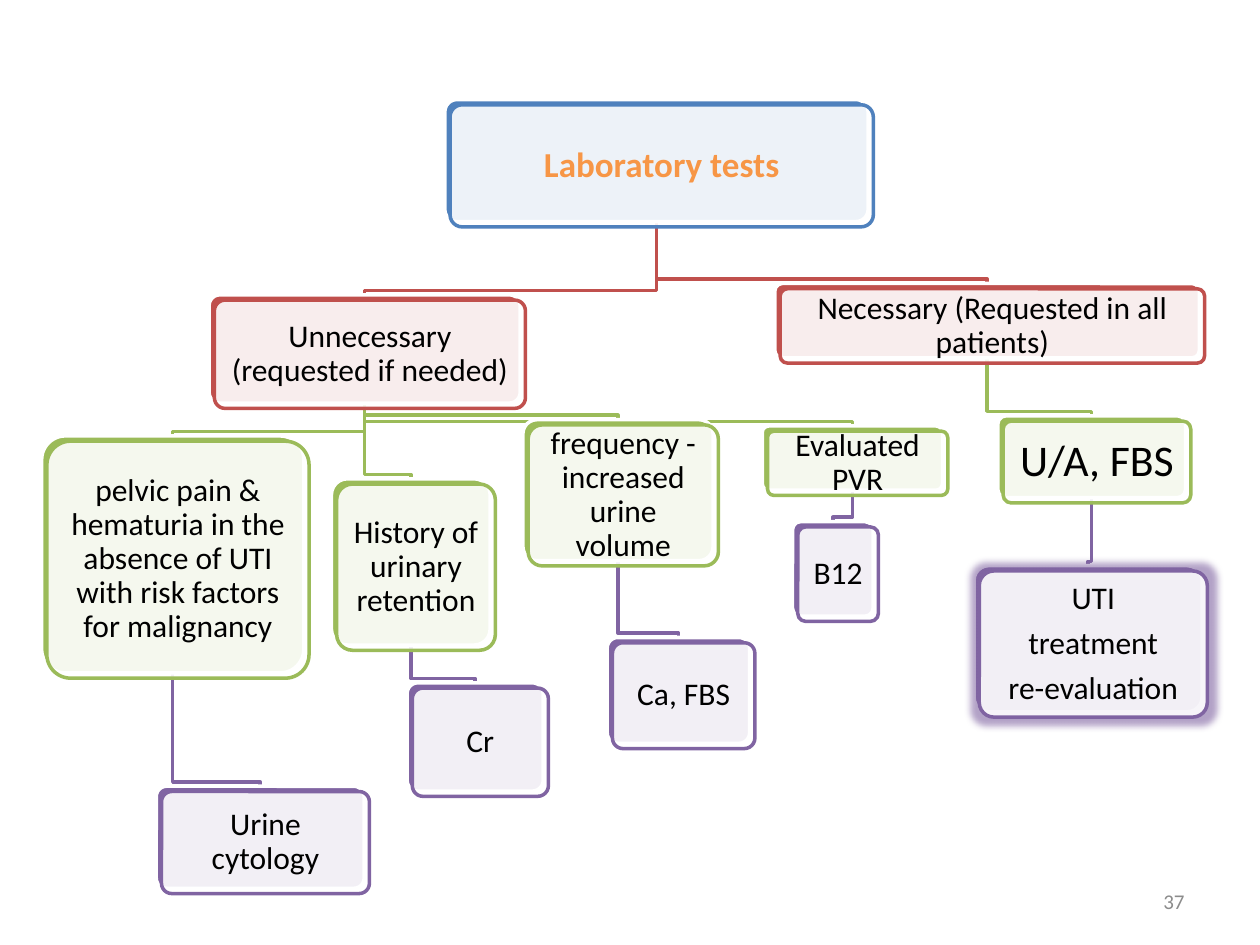
from dataclasses import dataclass

from lxml.etree import SubElement
from pptx import Presentation
from pptx.dml.color import RGBColor
from pptx.enum.shapes import MSO_SHAPE
from pptx.enum.text import MSO_ANCHOR, PP_ALIGN
from pptx.oxml.ns import qn
from pptx.util import Pt

COLORS = {
    "root": "4F81BD",
    "group": "C0504D",
    "finding": "9BBB59",
    "test": "8064A2",
    "heading": "F79646",
    "text": "000000",
    "white": "FFFFFF",
    "number": "8C8C8C",
}
FONT = "Calibri"
LINE_WIDTH = 2
FRONT_OFFSET = 3
KNEE_HEIGHT = 2.5


@dataclass
class Node:
    text: str
    level: str
    left: float
    top: float
    width: float
    height: float
    parent: str = ""
    size: float = 18
    inset: float = 5

    @property
    def center(self):
        return self.left + self.width / 2

    @property
    def bottom(self):
        return self.top + self.height


NODES = {
    "tests": Node("Laboratory tests", "root", 254.2, 56.9, 241.9, 69.8, size=20),
    "unnecessary": Node("Unnecessary (requested if needed)", "group",
                        119.5, 168.5, 177.8, 61.9, "tests"),
    "pain": Node("pelvic pain & hematuria in the absence of UTI with risk factors "
                 "for malignancy", "finding", 23.8, 249.1, 149.8, 135.4, "unnecessary"),
    "cytology": Node("Urine cytology", "test", 89.3, 449.3, 118.8, 58.3, "pain"),
    "retention": Node("History of urinary retention", "finding",
                      189.4, 273.6, 90.7, 95, "unnecessary"),
    "creatinine": Node("Cr", "test", 232.6, 390.2, 77.8, 61.9, "retention"),
    "frequency": Node("frequency - increased urine volume", "finding",
                      298.8, 239.8, 108.7, 80.6, "unnecessary"),
    "calcium": Node("Ca, FBS", "test", 347, 364.3, 81.4, 60.5, "frequency"),
    "residual": Node("Evaluated PVR", "finding", 435.6, 243.4, 103, 36.7, "unnecessary"),
    "vitamin": Node("B12", "test", 452.9, 298.1, 46.1, 54, "residual"),
    "necessary": Node("Necessary (Requested in all patients)", "group",
                      442.8, 162, 242.6, 42.5, "tests"),
    "urinalysis": Node("U/A, FBS", "finding", 570.2, 237.6, 107.3, 46.8, "necessary",
                       size=25, inset=7),
    "infection": Node("UTI\ntreatment\nre-evaluation", "test",
                      556.6, 323.3, 130.3, 83.5, "urinalysis"),
}


def rgb(name):
    return RGBColor.from_string(COLORS[name])


def set_alpha(color_element, percent):
    SubElement(color_element, qn("a:alpha")).set("val", str(percent * 1000))


def set_line(shape, color):
    shape.line.color.rgb = rgb(color)
    shape.line.width = Pt(LINE_WIDTH)


def add_branch(slide, parent, child):
    """Draw the elbow from the parent's bottom centre to the child's top centre."""
    knee = child.top - KNEE_HEIGHT
    builder = slide.shapes.build_freeform(Pt(parent.center), Pt(parent.bottom))
    builder.add_line_segments(
        [(Pt(parent.center), Pt(knee)), (Pt(child.center), Pt(knee)),
         (Pt(child.center), Pt(child.top))], close=False)
    branch = builder.convert_to_shape()
    branch.shadow.inherit = False
    branch.fill.background()
    set_line(branch, child.level)


def add_card(slide, node, offset, fill, line):
    card = slide.shapes.add_shape(
        MSO_SHAPE.ROUNDED_RECTANGLE, Pt(node.left + offset), Pt(node.top + offset),
        Pt(node.width), Pt(node.height))
    card.adjustments[0] = 0.1
    card.shadow.inherit = False
    card.fill.solid()
    card.fill.fore_color.rgb = rgb(fill)
    set_line(card, line)
    return card


def write_label(card, node):
    frame = card.text_frame
    frame.word_wrap = True
    frame.vertical_anchor = MSO_ANCHOR.MIDDLE
    frame.margin_left = frame.margin_right = Pt(node.inset)
    frame.margin_top = frame.margin_bottom = Pt(node.inset)
    frame.text = node.text
    is_root = node.level == "root"
    for paragraph in frame.paragraphs:
        paragraph.alignment = PP_ALIGN.CENTER
        paragraph.line_spacing = 0.9
        paragraph.space_after = Pt(round(node.size * 0.35, 2))
        paragraph.font.name = FONT
        paragraph.font.size = Pt(node.size)
        paragraph.font.bold = is_root
        paragraph.font.color.rgb = rgb("heading" if is_root else "text")


def add_node(slide, node):
    """Stack a translucent white card with the label on a solid coloured one."""
    add_card(slide, node, 0, node.level, "white")
    front = add_card(slide, node, FRONT_OFFSET, "white", node.level)
    set_alpha(front.fill._xPr.find(".//" + qn("a:srgbClr")), 90)
    write_label(front, node)
    return front


def add_glow(card, color, radius):
    effects = card._element.spPr.find(qn("a:effectLst"))
    glow = SubElement(effects, qn("a:glow"))
    glow.set("rad", str(Pt(radius)))
    glow_color = SubElement(glow, qn("a:srgbClr"))
    glow_color.set("val", COLORS[color])
    set_alpha(glow_color, 60)


def add_slide_number(slide, number):
    box = slide.shapes.add_textbox(Pt(516), Pt(500.5), Pt(168), Pt(28.75))
    box.text_frame.word_wrap = True
    box.text_frame.vertical_anchor = MSO_ANCHOR.MIDDLE
    paragraph = box.text_frame.paragraphs[0]
    paragraph.text = number
    paragraph.alignment = PP_ALIGN.RIGHT
    paragraph.font.name = FONT
    paragraph.font.size = Pt(12)
    paragraph.font.color.rgb = rgb("number")


def main():
    presentation = Presentation()
    presentation.slide_width = Pt(720)
    presentation.slide_height = Pt(540)
    slide = presentation.slides.add_slide(presentation.slide_layouts[6])

    for node in reversed(NODES.values()):
        if node.parent:
            add_branch(slide, NODES[node.parent], node)
    cards = {key: add_node(slide, node) for key, node in NODES.items()}
    add_glow(cards["infection"], "test", 8)
    add_slide_number(slide, "37")

    presentation.save("out.pptx")


if __name__ == "__main__":
    main()
